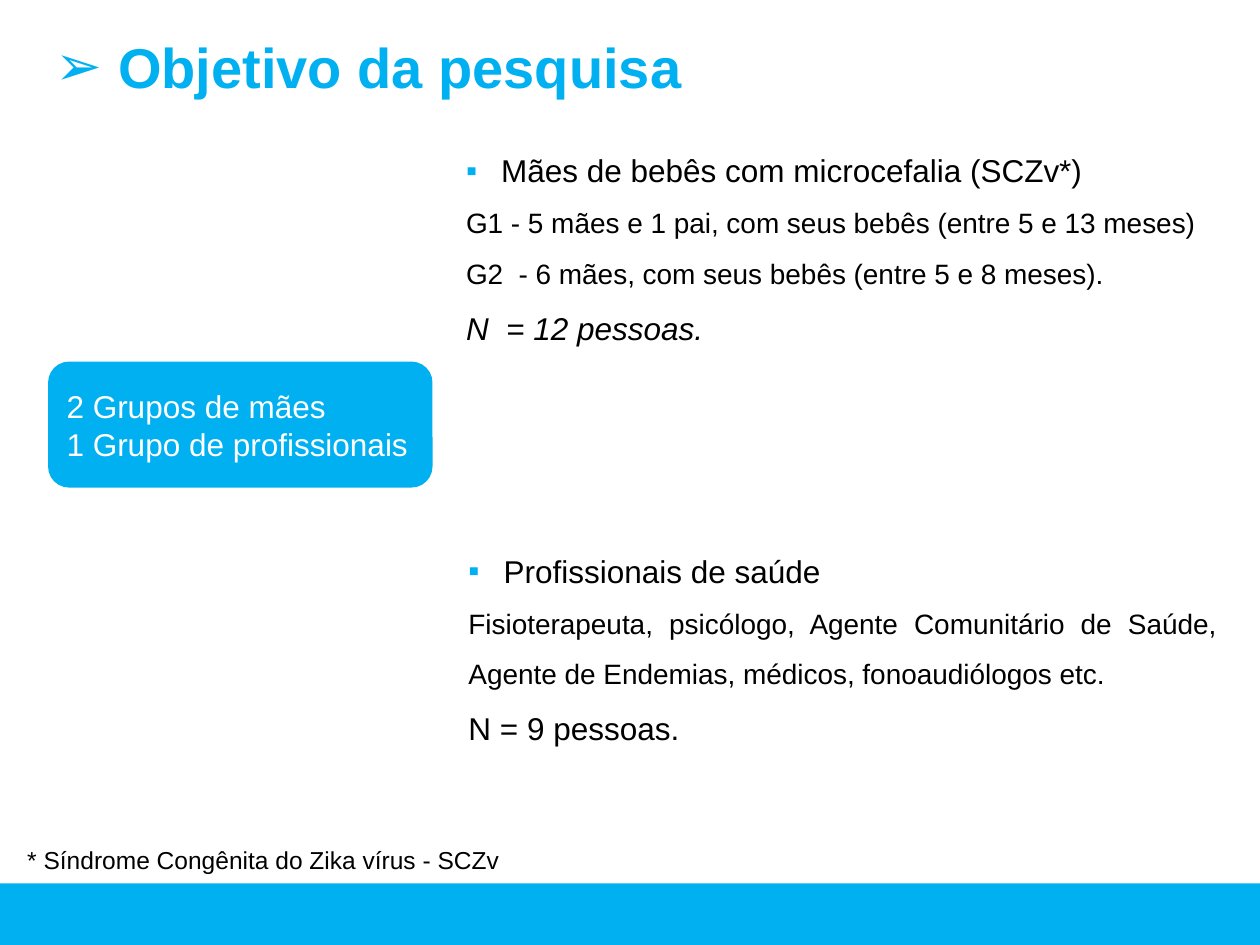
from dataclasses import dataclass

from lxml import etree
from pptx import Presentation
from pptx import util as u
from pptx.dml.color import RGBColor
from pptx.enum import shapes, text
from pptx.oxml import ns


@dataclass(frozen=True)
class Theme:
    font: str = "Arial"
    accent: str = "00B0F0"
    ink: str = "000000"
    paper: str = "FFFFFF"
    title: int = 32
    lead: int = 18
    detail: int = 16
    note: int = 14


@dataclass(frozen=True)
class Box:
    left: float
    top: float
    width: float
    height: float

    def lengths(self) -> list[u.Cm]:
        return [u.Cm(n) for n in (self.left, self.top, self.width, self.height)]


@dataclass(frozen=True)
class Line:
    text: str
    size: int
    color: str
    bold: bool = False
    italic: bool = False
    bullet: str = ""
    indent: float = 0
    spacing: float = 1.0


THEME = Theme()


def lead(content: str, **style) -> Line:
    return Line(content, THEME.lead, THEME.ink, spacing=1.5, **style)


def detail(content: str) -> Line:
    return Line(content, THEME.detail, THEME.ink, spacing=1.5)


def heading(content: str) -> Line:
    return lead(content, bullet="▪", indent=0.71)


def set_bullet(p, line: Line) -> None:
    pPr = p._p.get_or_add_pPr()
    pPr.set("marL", str(u.Cm(line.indent)))
    pPr.set("indent", str(-u.Cm(line.indent)))
    if not line.bullet:
        etree.SubElement(pPr, ns.qn("a:buNone"))
        return
    color = etree.SubElement(pPr, ns.qn("a:buClr"))
    etree.SubElement(color, ns.qn("a:srgbClr"), val=THEME.accent)
    etree.SubElement(pPr, ns.qn("a:buFont"), typeface=THEME.font)
    etree.SubElement(pPr, ns.qn("a:buChar"), char=line.bullet)


def write(sp, lines: list[Line], anchor=text.MSO_ANCHOR.TOP, wrap: bool = True) -> None:
    tf = sp.text_frame
    tf.text = "\n".join(line.text for line in lines)
    tf.word_wrap = wrap
    tf.auto_size = text.MSO_AUTO_SIZE.NONE
    tf.vertical_anchor = anchor
    for p, line in zip(tf.paragraphs, lines):
        p.alignment = text.PP_ALIGN.JUSTIFY
        p.line_spacing = line.spacing
        p.space_before = p.space_after = u.Pt(0)
        set_bullet(p, line)
        for r in p.runs:
            r.font.name = THEME.font
            r.font.size = u.Pt(line.size)
            r.font.bold = line.bold
            r.font.italic = line.italic
            r.font.color.rgb = RGBColor.from_string(line.color)


def place(sp, box: Box) -> None:
    sp.left, sp.top, sp.width, sp.height = box.lengths()


def add_panel(s, kind: shapes.MSO_SHAPE, box: Box):
    sp = s.shapes.add_shape(kind, *box.lengths())
    sp.shadow.inherit = False
    sp.fill.solid()
    sp.fill.fore_color.rgb = RGBColor.from_string(THEME.accent)
    sp.line.fill.background()
    return sp


def main() -> None:
    prs = Presentation()
    prs.slide_width, prs.slide_height = u.Cm(25.4), u.Cm(19.05)
    s = prs.slides.add_slide(prs.slide_layouts.get_by_name("Two Content"))
    title, mothers, staff = list(s.placeholders)[:3]

    place(title, Box(0.86, 0.53, 22.43, 1.63))
    write(title, [Line("Objetivo da pesquisa", THEME.title, THEME.accent,
                       bold=True, bullet="➢", indent=1.27)])

    place(mothers, Box(9.14, 2.54, 16.08, 4.75))
    write(mothers, [
        heading("Mães de bebês com microcefalia (SCZv*)"),
        detail("G1 - 5 mães e 1 pai, com seus bebês (entre 5 e 13 meses)"),
        detail("G2  - 6 mães, com seus bebês (entre 5 e 8 meses)."),
        lead("N  = 12 pessoas.", italic=True),
    ])

    place(staff, Box(9.19, 10.62, 15.6, 4.62))
    write(staff, [
        heading("Profissionais de saúde"),
        detail("Fisioterapeuta, psicólogo, Agente Comunitário de Saúde, "
               "Agente de Endemias, médicos, fonoaudiólogos etc."),
        lead("N = 9 pessoas."),
    ])

    groups = add_panel(s, shapes.MSO_SHAPE.ROUNDED_RECTANGLE, Box(0.97, 7.29, 7.75, 2.54))
    write(groups, [Line(content, THEME.lead, THEME.paper)
                   for content in ("2 Grupos de mães", "1 Grupo de profissionais")],
          text.MSO_ANCHOR.MIDDLE)

    note = s.shapes.add_textbox(*Box(0.3, 16.92, 10.21, 0.86).lengths())
    write(note, [Line("* Síndrome Congênita do Zika vírus - SCZv", THEME.note, THEME.ink)],
          wrap=False)

    add_panel(s, shapes.MSO_SHAPE.RECTANGLE, Box(0, 17.81, 25.4, 1.24))
    prs.save("out.pptx")


if __name__ == "__main__":
    main()
